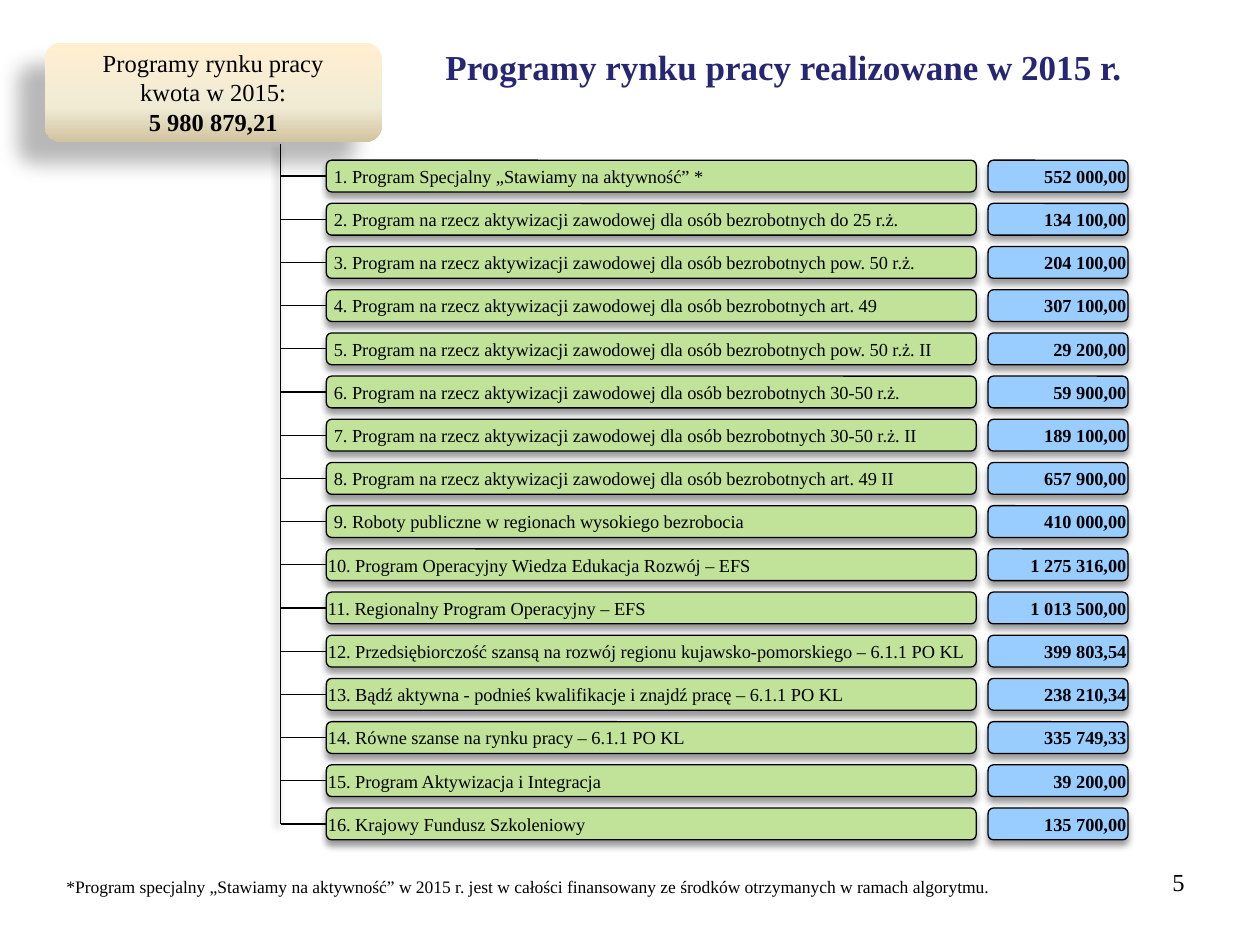
from dataclasses import dataclass

from lxml import etree
from pptx import Presentation
from pptx.dml.color import RGBColor
from pptx.enum.shapes import MSO_CONNECTOR, MSO_SHAPE
from pptx.enum.text import MSO_ANCHOR, PP_ALIGN
from pptx.oxml.ns import qn
from pptx.util import Cm, Pt

ROUNDED = MSO_SHAPE.ROUNDED_RECTANGLE
STRAIGHT = MSO_CONNECTOR.STRAIGHT
MIDDLE = MSO_ANCHOR.MIDDLE
LEFT, CENTER, RIGHT = PP_ALIGN.LEFT, PP_ALIGN.CENTER, PP_ALIGN.RIGHT
LEFT_SIDE = 1


@dataclass(frozen=True)
class Theme:
    """Colours, type sizes and shadows (opacity, blur, distance, angle)."""
    font: str = "Times New Roman"
    ink: str = "000000"
    title: str = "262673"
    program: str = "C0E399"
    amount: str = "99CCFF"
    card: tuple = ((0, "FFEFD1"), (65, "F0EBD5"), (100, "D1C39F"))
    title_size: float = 20
    card_size: float = 14
    row_size: float = 10.5
    note_size: float = 10
    line: float = 0.75
    row_shadow: tuple = (40, 4, 3, 90)
    trunk_shadow: tuple = (40, 4, 3, 135)
    card_shadow: tuple = (28, 11.8, 19.7, 141)


THEME = Theme()

CARD_LINES = ("Programy rynku pracy", "kwota w 2015:", "5 980 879,21")
PROGRAMS = (
    ("Program Specjalny „Stawiamy na aktywność” *", "552 000,00"),
    ("Program na rzecz aktywizacji zawodowej dla osób bezrobotnych do 25 r.ż.", "134 100,00"),
    ("Program na rzecz aktywizacji zawodowej dla osób bezrobotnych pow. 50 r.ż.", "204 100,00"),
    ("Program na rzecz aktywizacji zawodowej dla osób bezrobotnych art. 49", "307 100,00"),
    ("Program na rzecz aktywizacji zawodowej dla osób bezrobotnych pow. 50 r.ż. II", "29 200,00"),
    ("Program na rzecz aktywizacji zawodowej dla osób bezrobotnych 30-50 r.ż.", "59 900,00"),
    ("Program na rzecz aktywizacji zawodowej dla osób bezrobotnych 30-50 r.ż. II", "189 100,00"),
    ("Program na rzecz aktywizacji zawodowej dla osób bezrobotnych art. 49 II", "657 900,00"),
    ("Roboty publiczne w regionach wysokiego bezrobocia", "410 000,00"),
    ("Program Operacyjny Wiedza Edukacja Rozwój – EFS", "1 275 316,00"),
    ("Regionalny Program Operacyjny – EFS", "1 013 500,00"),
    ("Przedsiębiorczość szansą na rozwój regionu kujawsko-pomorskiego – 6.1.1 PO KL", "399 803,54"),
    ("Bądź aktywna - podnieś kwalifikacje i znajdź pracę – 6.1.1 PO KL", "238 210,34"),
    ("Równe szanse na rynku pracy – 6.1.1 PO KL", "335 749,33"),
    ("Program Aktywizacja i Integracja", "39 200,00"),
    ("Krajowy Fundusz Szkoleniowy", "135 700,00"),
)


def set_effects(shape, shadow=None):
    """Replace the inherited shadow with the given one, or with none."""
    properties = shape._element.spPr
    effects = properties.find(qn("a:effectLst"))
    if effects is None:
        effects = etree.SubElement(properties, qn("a:effectLst"))
    if shadow:
        opacity, blur, distance, angle = shadow
        outer = etree.SubElement(
            effects, qn("a:outerShdw"), blurRad=str(Pt(blur)), dist=str(Pt(distance)),
            dir=str(angle * 60000), algn="ctr", rotWithShape="0")
        color = etree.SubElement(outer, qn("a:srgbClr"), val=THEME.ink)
        etree.SubElement(color, qn("a:alpha"), val=str(opacity * 1000))


def set_gradient(shape, stops):
    """Fill a shape from top to bottom with the given colour stops."""
    shape.fill.gradient()
    shape.fill.gradient_angle = 270
    stop_list = shape._element.spPr.find(qn("a:gradFill")).find(qn("a:gsLst"))
    for old_stop in list(stop_list):
        stop_list.remove(old_stop)
    for position, color in stops:
        stop = etree.SubElement(stop_list, qn("a:gs"), pos=str(position * 1000))
        etree.SubElement(stop, qn("a:srgbClr"), val=color)


def write(shape, text, size, align=LEFT, bold=False, color=THEME.ink):
    """Put text into a shape and format all of its runs."""
    frame = shape.text_frame
    frame.word_wrap = True
    frame.text = text
    for para in frame.paragraphs:
        para.alignment = align
        for span in para.runs:
            span.font.name = THEME.font
            span.font.size = Pt(size)
            span.font.bold = bold
            span.font.color.rgb = RGBColor.from_string(color)


def add_text(page, box, text, size, **style):
    """Add a plain text box."""
    write(page.shapes.add_textbox(*box), text, size, **style)


def add_panel(page, box, shadow):
    """Add a rounded panel with a shadow and no text margins."""
    panel = page.shapes.add_shape(ROUNDED, *box)
    panel.shadow.inherit = False
    set_effects(panel, shadow)
    frame = panel.text_frame
    frame.vertical_anchor = MIDDLE
    frame.margin_left = frame.margin_right = frame.margin_top = frame.margin_bottom = 0
    return panel


def add_bar(page, box, color, text, **style):
    """Add one outlined bar of the program list."""
    bar = add_panel(page, box, THEME.row_shadow)
    bar.fill.solid()
    bar.fill.fore_color.rgb = RGBColor.from_string(color)
    bar.line.color.rgb = RGBColor.from_string(THEME.ink)
    bar.line.width = Pt(THEME.line)
    write(bar, text, THEME.row_size, **style)
    return bar


def add_line(page, start, end, shadow=None):
    """Add a thin straight connector."""
    line = page.shapes.add_connector(STRAIGHT, *start, *end)
    line.line.color.rgb = RGBColor.from_string(THEME.ink)
    line.line.width = Pt(THEME.line)
    set_effects(line, shadow)
    return line


def add_total_card(page, box):
    """Add the card with the total amount."""
    card = add_panel(page, box, THEME.card_shadow)
    set_gradient(card, THEME.card)
    card.line.fill.background()
    write(card, "\n".join(CARD_LINES), THEME.card_size, align=CENTER)
    card.text_frame.paragraphs[-1].runs[0].font.bold = True


def add_program_tree(page, box):
    """Add the trunk, the branches and the numbered bars with their amounts."""
    left, top, width, height = box
    first_row, bar_height = top + Cm(0.33), Cm(0.64)
    pitch = (top + height - bar_height - first_row) / (len(PROGRAMS) - 1)
    name_left, name_width, amount_width = left + Cm(0.92), Cm(13.1), Cm(2.82)
    amount_left = left + width - amount_width
    last_middle = top + height - bar_height // 2
    add_line(page, (left, top), (left, last_middle), THEME.trunk_shadow)
    for index, (name, amount) in enumerate(PROGRAMS):
        row_top = round(first_row + index * pitch)
        middle = row_top + bar_height // 2
        bar = add_bar(page, (name_left, row_top, name_width, bar_height),
                      THEME.program, f"{index + 1}. {name}")
        bar.text_frame.margin_left = Cm(0.12) if index < 9 else 0
        branch = add_line(page, (name_left, middle), (left, middle))
        branch.begin_connect(bar, LEFT_SIDE)
        add_bar(page, (amount_left, row_top, amount_width, bar_height),
                THEME.amount, amount, align=RIGHT, bold=True)


def add_footer(page, box):
    """Add the footnote and the page number."""
    left, top, width, height = box
    add_text(page, (left, top + Cm(0.18), Cm(21.44), Cm(0.69)),
             "*Program specjalny „Stawiamy na aktywność” w 2015 r. jest w całości "
             "finansowany ze środków otrzymanych w ramach algorytmu.", THEME.note_size)
    number_width = Cm(5.92)
    add_text(page, (left + width - number_width, top, number_width, height),
             "5", THEME.card_size, align=RIGHT)


def main():
    """Build the deck and save it."""
    deck = Presentation()
    deck.slide_width, deck.slide_height = Cm(25.4), Cm(19.05)
    page = deck.slides.add_slide(deck.slide_layouts[6])
    add_total_card(page, (Cm(0.9), Cm(0.86), Cm(6.8), Cm(2)))
    add_text(page, (Cm(8.73), Cm(0.79), Cm(15.83), Cm(1.12)),
             "Programy rynku pracy realizowane w 2015 r.",
             THEME.title_size, bold=True, color=THEME.title)
    add_program_tree(page, (Cm(5.66), Cm(2.9), Cm(17.08), Cm(14.03)))
    add_footer(page, (Cm(1.09), Cm(17.35), Cm(23.04), Cm(1.32)))
    deck.save("out.pptx")


if __name__ == "__main__":
    main()
